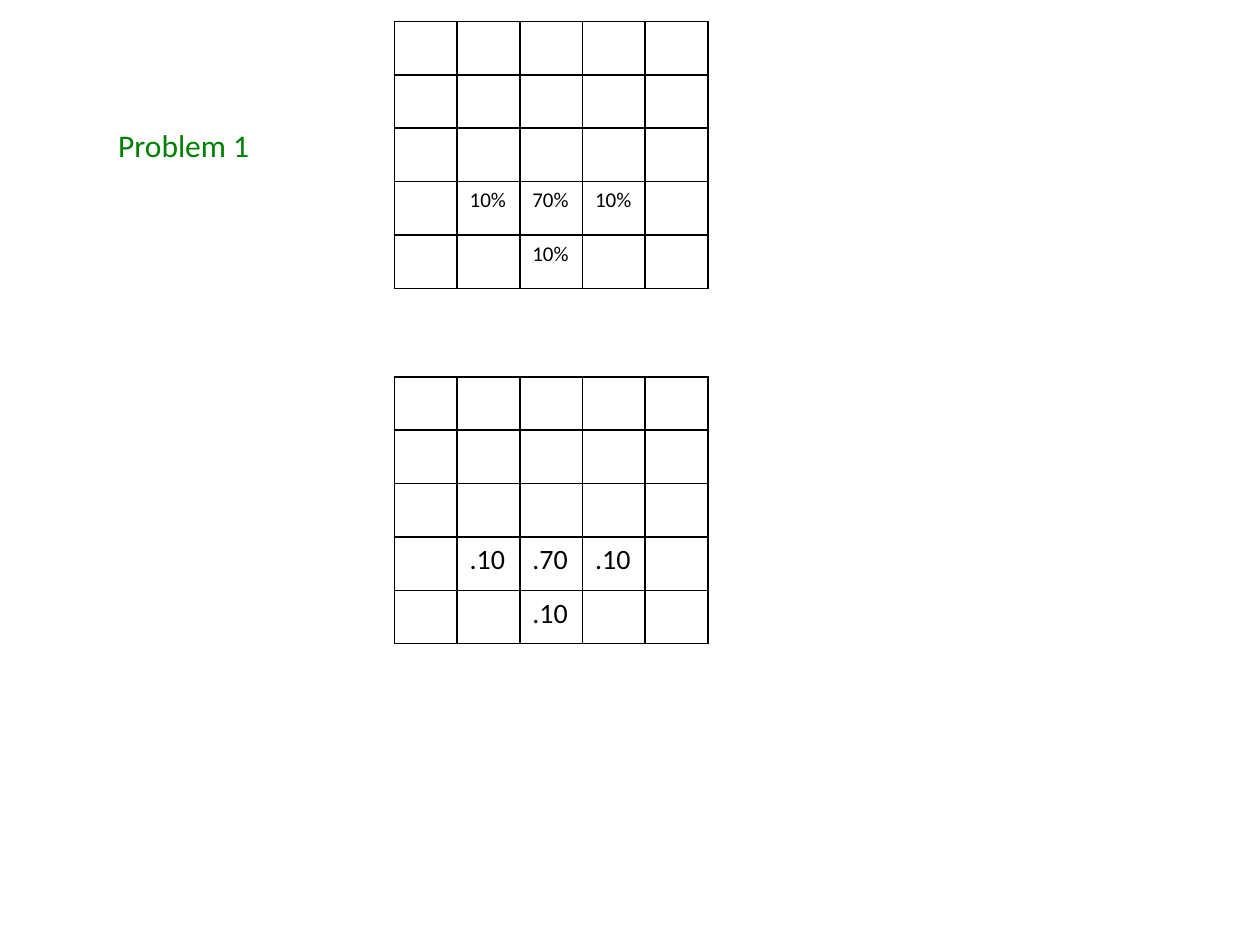
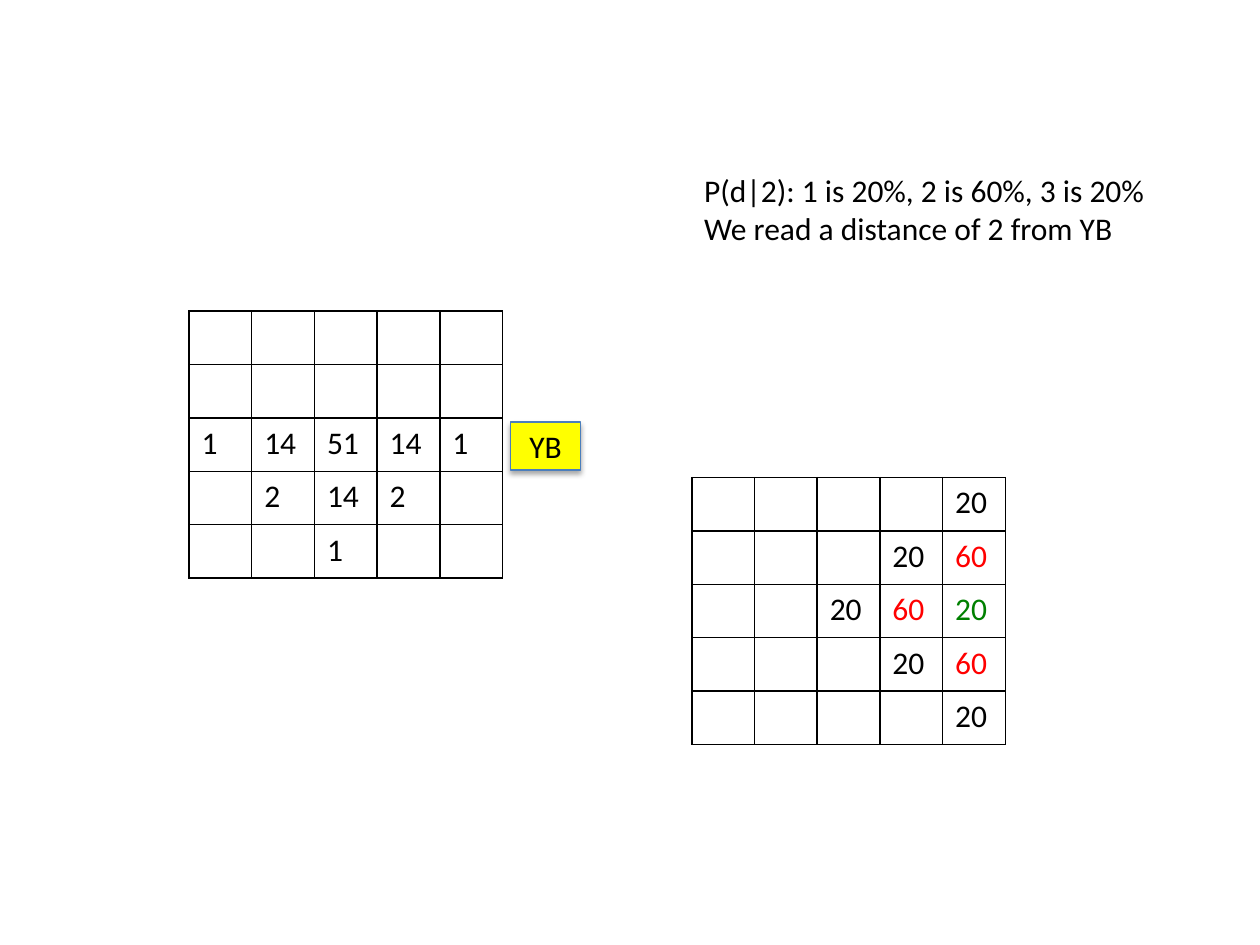
from dataclasses import dataclass

from lxml import etree
from pptx import Presentation
from pptx.dml.color import RGBColor as RGB
from pptx.enum.shapes import MSO_SHAPE as SHAPE
from pptx.enum.text import MSO_ANCHOR as ANCHOR, MSO_AUTO_SIZE as AUTO, PP_ALIGN as ALIGN
from pptx.oxml.ns import qn
from pptx.util import Inches, Pt


@dataclass(frozen=True)
class Theme:
    font: str = "Calibri"
    black: str = "000000"
    green: str = "008000"
    red: str = "FF0000"
    yellow: str = "FFFF00"
    outline: str = "4B7EBC"
    small: int = 12
    medium: int = 16
    body: int = 18


T = Theme()
GRID_SIZE, GRID_W, GRID_H = 5, 2.49, 2.12

# Content: each grid lists only its filled cells, as {(row, column): text}
SLIDES = [
    {
        "grids": [
            {"at": (3.13, 0.17), "size": T.small,
             "cells": {(3, 1): "10%", (3, 2): "70%", (3, 3): "10%", (4, 2): "10%"}},
            {"at": (3.13, 2.99), "size": T.medium,
             "cells": {(3, 1): ".10", (3, 2): ".70", (3, 3): ".10", (4, 2): ".10"}},
        ],
        "notes": [{"box": (0.84, 0.95, 1.26, 0.4), "color": T.green, "lines": ["Problem 1"]}],
        "beacons": [],
    },
    {
        "grids": [
            {"at": (1.5, 2.47), "size": T.body,
             "cells": {(2, 0): "1", (2, 1): "14", (2, 2): "51", (2, 3): "14", (2, 4): "1",
                       (3, 1): "2", (3, 2): "14", (3, 3): "2", (4, 2): "1"}},
            {"at": (5.49, 3.79), "size": T.body,
             "cells": {(0, 4): "20", (1, 3): "20", (1, 4): "60",
                       (2, 2): "20", (2, 3): "60", (2, 4): "20",
                       (3, 3): "20", (3, 4): "60", (4, 4): "20"},
             "colors": {(1, 4): T.red, (2, 3): T.red, (3, 4): T.red, (2, 4): T.green}},
        ],
        "notes": [{"box": (5.49, 1.31, 3.74, 0.71), "color": T.black,
                   "lines": ["P(d|2): 1 is 20%, 2 is 60%, 3 is 20%",
                             "We read a distance of 2 from YB"]}],
        "beacons": [{"box": (4.05, 3.35, 0.56, 0.38), "text": "YB"}],
    },
]


def write(p, text, size=T.body, color=T.black):
    r = p.add_run()
    r.text = text
    for name, value in {"name": T.font, "size": Pt(size)}.items():
        setattr(r.font, name, value)
    r.font.color.rgb = RGB.from_string(color)


def add_color(parent, color):
    return etree.SubElement(parent, qn("a:srgbClr"), val=color)


def set_borders(cell):
    tc_pr = cell._tc.get_or_add_tcPr()
    for i, side in enumerate(("lnL", "lnR", "lnT", "lnB")):
        ln = etree.Element(qn(f"a:{side}"), w=str(Pt(1)))
        add_color(etree.SubElement(ln, qn("a:solidFill")), T.black)
        tc_pr.insert(i, ln)


def add_grid(s, grid):
    x, y = grid["at"]
    table = s.shapes.add_table(GRID_SIZE, GRID_SIZE, Inches(x), Inches(y),
                               Inches(GRID_W), Inches(GRID_H)).table
    table.first_row = table.horz_banding = False
    for row in range(GRID_SIZE):
        for col in range(GRID_SIZE):
            cell = table.cell(row, col)
            cell.fill.background()
            set_borders(cell)
            text = grid["cells"].get((row, col))
            if text:
                color = grid.get("colors", {}).get((row, col), T.black)
                write(cell.text_frame.paragraphs[0], text, grid["size"], color)


def add_note(s, note):
    tf = s.shapes.add_textbox(*map(Inches, note["box"])).text_frame
    tf.word_wrap = False
    tf.auto_size = AUTO.SHAPE_TO_FIT_TEXT
    for i, line in enumerate(note["lines"]):
        p = tf.add_paragraph() if i else tf.paragraphs[0]
        write(p, line, color=note["color"])


def add_beacon(s, beacon):
    sp = s.shapes.add_shape(SHAPE.RECTANGLE, *map(Inches, beacon["box"]))
    sp.fill.solid()
    sp.fill.fore_color.rgb = RGB.from_string(T.yellow)
    sp.line.color.rgb = RGB.from_string(T.outline)
    sp.line.width = Pt(0.75)
    # Soft shadow straight below
    sp.shadow.inherit = False
    effects = sp._element.spPr.find(qn("a:effectLst"))
    shadow = etree.SubElement(effects, qn("a:outerShdw"), blurRad=str(Pt(3.1)),
                              dist=str(Pt(1.8)), dir=str(90 * 60000), rotWithShape="0")
    etree.SubElement(add_color(shadow, T.black), qn("a:alpha"), val="35000")
    # Label
    tf = sp.text_frame
    tf.vertical_anchor = ANCHOR.MIDDLE
    p = tf.paragraphs[0]
    p.alignment = ALIGN.CENTER
    write(p, beacon["text"])


def main():
    prs = Presentation()
    prs.slide_width, prs.slide_height = Inches(10), Inches(7.5)
    for content in SLIDES:
        s = prs.slides.add_slide(prs.slide_layouts[6])
        for kind, add in (("grids", add_grid), ("notes", add_note), ("beacons", add_beacon)):
            for item in content[kind]:
                add(s, item)
    prs.save("out.pptx")


if __name__ == "__main__":
    main()
